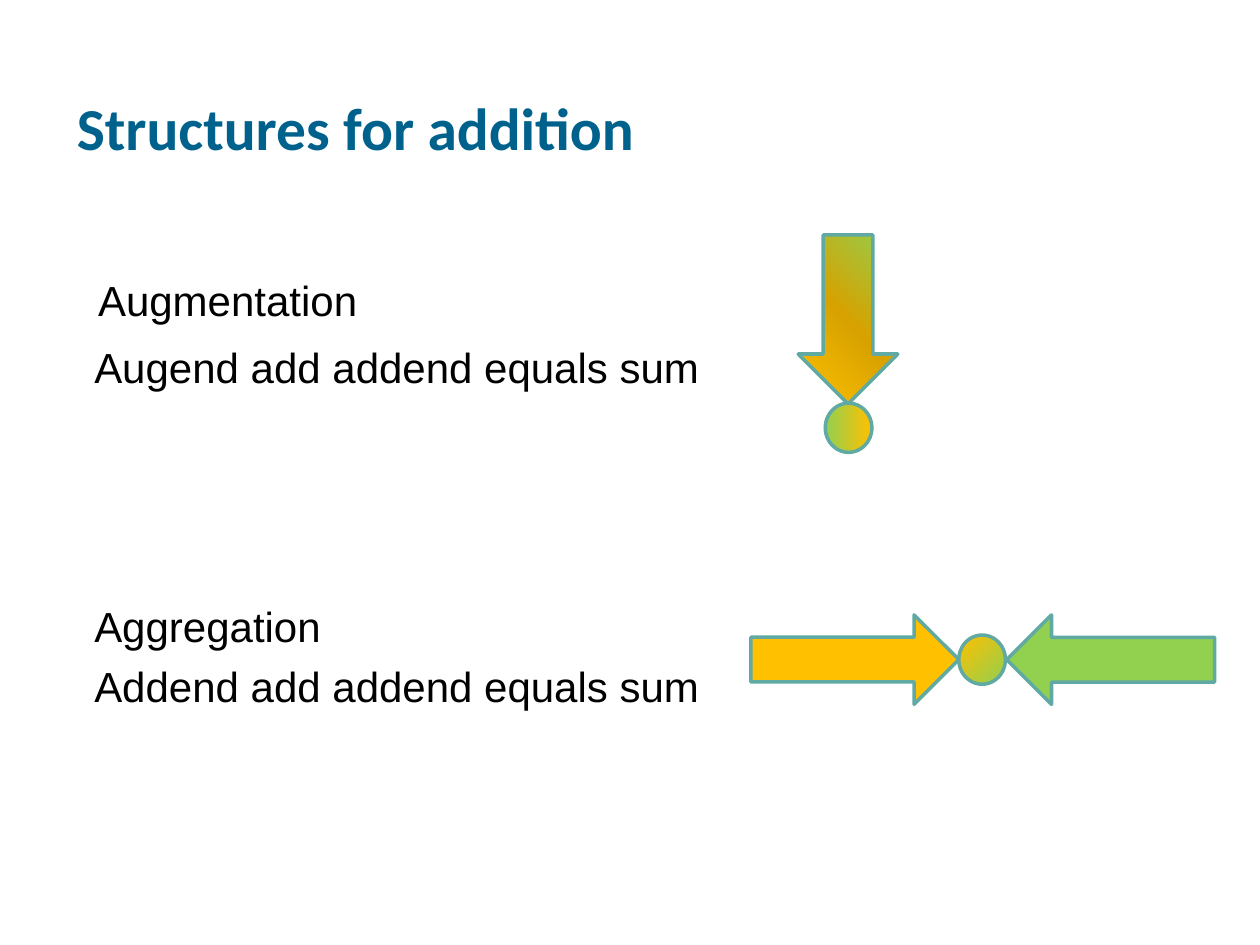
from lxml.etree import SubElement
from pptx import Presentation
from pptx.dml.color import RGBColor
from pptx.enum.shapes import MSO_SHAPE
from pptx.enum.text import MSO_ANCHOR, PP_ALIGN
from pptx.oxml.ns import qn
from pptx.util import Inches, Pt

BLUE = RGBColor(0x00, 0x62, 0x8C)
BLACK = RGBColor(0x00, 0x00, 0x00)
TEAL = RGBColor(0x60, 0xAA, 0xA3)
GREEN = RGBColor(0x92, 0xD0, 0x50)
GOLD = RGBColor(0xFF, 0xC0, 0x00)
OCHRE = RGBColor(0xD7, 0xA2, 0x00)


def put_text(frame, *lines, font="Arial", size=24, color=BLACK, bold=False,
             anchor=MSO_ANCHOR.MIDDLE, before=5.5):
    """Fill a text frame with one formatted paragraph per line."""
    frame.word_wrap = True
    frame.vertical_anchor = anchor
    for i, line in enumerate(lines):
        para = frame.paragraphs[0] if i == 0 else frame.add_paragraph()
        para.alignment = PP_ALIGN.LEFT
        para.space_before = Pt(before)
        run = para.add_run()
        run.text = line
        run.font.name = font
        run.font.size = Pt(size)
        run.font.bold = bold
        run.font.color.rgb = color


def add_text(slide, box, *lines, **style):
    """Add a text box at the given place in inches."""
    shape = slide.shapes.add_textbox(*map(Inches, box))
    put_text(shape.text_frame, *lines, **style)


def add_shape(slide, kind, box, color=None, turn=0):
    """Add a teal-outlined shape, solid when a colour is given."""
    shape = slide.shapes.add_shape(kind, *map(Inches, box))
    shape.shadow.inherit = False
    shape.rotation = turn
    shape.line.color.rgb = TEAL
    shape.line.width = Pt(2)
    if color is not None:
        shape.fill.solid()
        shape.fill.fore_color.rgb = color
    return shape


def blend(shape, colors, angle=None):
    """Fill with even colour stops, linear by angle or from the top right."""
    shape.fill.gradient()
    grad = shape.element.spPr.find(qn("a:gradFill"))
    for child in list(grad):
        grad.remove(child)
    grad.set("rotWithShape", "1")
    stops = SubElement(grad, qn("a:gsLst"))
    for i, color in enumerate(colors):
        place = 100000 * i // (len(colors) - 1)
        stop = SubElement(stops, qn("a:gs"), pos=str(place))
        SubElement(stop, qn("a:srgbClr"), val=str(color))
    if angle is None:
        path = SubElement(grad, qn("a:path"), path="circle")
        SubElement(path, qn("a:fillToRect"), l="100000", b="100000")
    else:
        SubElement(grad, qn("a:lin"), ang=str(angle * 60000), scaled="0")


def add_ball(slide, left, top, colors, angle):
    """Add a small ball with a linear blend."""
    ball = add_shape(slide, MSO_SHAPE.OVAL, (left, top, 0.37, 0.39))
    blend(ball, colors, angle)


def main():
    """Build the slide and save it."""
    deck = Presentation()
    deck.slide_width, deck.slide_height = Inches(10), Inches(7.5)
    slide = deck.slides.add_slide(deck.slide_layouts[5])

    title = slide.shapes.title
    title.left, title.top = Inches(0.51), Inches(0.55)
    title.width, title.height = Inches(8.67), Inches(0.79)
    put_text(title.text_frame, "Structures for addition", font="Calibri",
             size=34, color=BLUE, bold=True, anchor=MSO_ANCHOR.BOTTOM, before=0)

    add_text(slide, (0.68, 1.9, 9, 0.95), "Augmentation")
    add_text(slide, (0.65, 2.57, 9, 0.68), "Augend add addend equals sum")
    add_text(slide, (0.65, 4.06, 9, 2.28),
             "Aggregation", "Addend add addend equals sum")

    arrow = MSO_SHAPE.RIGHT_ARROW
    down = add_shape(slide, arrow, (6.06, 2.14, 1.34, 0.79), turn=90)
    blend(down, (GREEN, OCHRE, GOLD))
    add_ball(slide, 6.55, 3.2, (GOLD, GREEN), 180)

    for left, color, turn in ((5.96, GOLD, 0), (7.99, GREEN, 180)):
        add_shape(slide, arrow, (left, 4.88, 1.65, 0.71), color, turn)
    add_ball(slide, 7.61, 5.04, (GREEN, GOLD), 225)

    deck.save("out.pptx")


if __name__ == "__main__":
    main()
